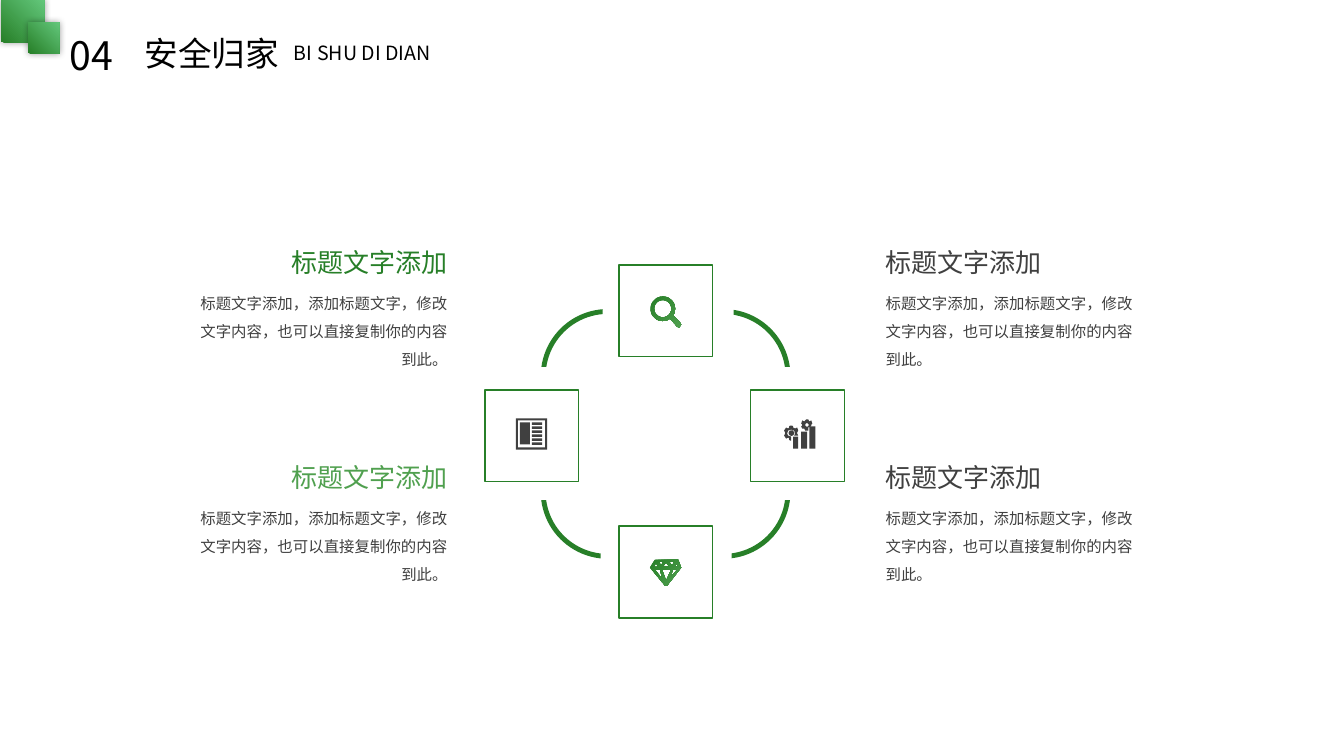
"""Build a slide with four icon boxes on a ring and four captions."""
import math

import pptx
import pptx.dml.color
import pptx.enum.shapes
import pptx.enum.text
import pptx.oxml
import pptx.oxml.ns
import pptx.oxml.xmlchemy
import pptx.util

Cm = pptx.util.Cm
RGB = pptx.dml.color.RGBColor.from_string
SHAPE = pptx.enum.shapes.MSO_SHAPE
ALIGN = pptx.enum.text.PP_ALIGN

THEME = {
    "dark_green": "277F28", "green": "50A04F", "mint": "63C77B",
    "gray": "404040", "black": "000000", "white": "FFFFFF",
    "number": 28, "heading": 24, "subheading": 14, "title": 18.6, "body": 11,
    "head_font": "Noto Sans CJK JP", "text_font": "Noto Sans CJK SC",
}
SHADOW = (
    '<a:effectLst xmlns:a="http://schemas.openxmlformats.org/drawingml/2006/main">'
    '<a:outerShdw blurRad="63500" dist="0" dir="0" algn="ctr" rotWithShape="0">'
    '<a:srgbClr val="000000"><a:alpha val="40000"/></a:srgbClr>'
    '</a:outerShdw></a:effectLst>'
)

prs = pptx.Presentation()
prs.slide_width, prs.slide_height = Cm(33.87), Cm(19.05)
s = prs.slides.add_slide(prs.slide_layouts[6])


def add_text(text, box, size, color, font="text_font", align=ALIGN.LEFT, spacing=1.0, wrap=True):
    tf = s.shapes.add_textbox(*map(Cm, box)).text_frame
    frame_format = {"word_wrap": wrap, "margin_top": 0, "margin_bottom": 0}
    for name, value in frame_format.items():
        setattr(tf, name, value)
    p = tf.paragraphs[0]
    p.alignment, p.line_spacing = align, spacing
    r = p.add_run()
    r.text = text
    font_format = {"name": THEME[font], "size": pptx.util.Pt(THEME[size])}
    for name, value in font_format.items():
        setattr(r.font, name, value)
    r.font.color.rgb = RGB(THEME[color])
    ea = pptx.oxml.xmlchemy.OxmlElement("a:ea")
    ea.set("typeface", THEME[font])
    r.font._element.find(pptx.oxml.ns.qn("a:latin")).addnext(ea)


def paint(shape, fill=None, line=None, width=1, angle=0):
    shape.shadow.inherit = False
    if isinstance(fill, tuple):
        shape.fill.gradient()
        shape.fill.gradient_angle = angle
        for stop, color in zip(shape.fill.gradient_stops, fill):
            stop.color.rgb = RGB(THEME[color])
    elif fill:
        shape.fill.solid()
        shape.fill.fore_color.rgb = RGB(THEME[fill])
    else:
        shape.fill.background()
    if line:
        shape.line.color.rgb = RGB(THEME[line])
        shape.line.width = pptx.util.Pt(width)
    else:
        shape.line.fill.background()


body = "标题文字添加，添加标题文字，修改文字内容，也可以直接复制你的内容到此。"
body_w, title_w = 6.86, 4.5
for top, left_color in ((6.22, "dark_green"), (11.63, "green")):
    for x, title_x, align, color in (
        (4.67, 4.67 + body_w - title_w, ALIGN.RIGHT, left_color),
        (22.07, 22.07, ALIGN.LEFT, "gray"),
    ):
        add_text("标题文字添加", (title_x, top, title_w, 1.04), "title", color, align=align, wrap=False)
        add_text(body, (x, top + 0.97, body_w, 2.29), "body", "gray", align=align, spacing=1.5)

for text, box, size, font in (
    ("04", (1.5, 0.79, 2.06, 1.45), "number", "head_font"),
    ("安全归家", (3.4, 0.84, 4.04, 1.27), "heading", "head_font"),
    ("BI SHU DI DIAN", (7.16, 1.04, 4.75, 0.86), "subheading", "text_font"),
):
    add_text(text, box, size, "black", font, ALIGN.JUSTIFY)

for box in ((0.03, 0, 1.09, 1.07), (0.71, 0.56, 0.79, 0.79)):
    sp = s.shapes.add_shape(SHAPE.RECTANGLE, *map(Cm, box))
    paint(sp, ("dark_green", "mint"), angle=45)
    effects = sp._element.spPr.find(pptx.oxml.ns.qn("a:effectLst"))
    effects.getparent().replace(effects, pptx.oxml.parse_xml(SHADOW))

ring = s.shapes.add_shape(SHAPE.ROUNDED_RECTANGLE, Cm(13.69), Cm(7.85), Cm(6.17), Cm(6.17))
ring.adjustments[0] = 0.264
paint(ring, line="dark_green", width=3.5)

for x, y in ((15.19, 6.17), (15.14, 12.32), (12.14, 9.25), (18.24, 9.25)):
    gap = s.shapes.add_shape(SHAPE.RECTANGLE, Cm(x), Cm(y), Cm(3.3), Cm(3.35))
    paint(gap, "white")
for x, y in ((15.6, 6.68), (15.6, 13.26), (12.22, 9.83), (18.92, 9.83)):
    frame = s.shapes.add_shape(SHAPE.RECTANGLE, Cm(x), Cm(y), Cm(2.36), Cm(2.31))
    paint(frame, line="dark_green")

circles = [
    [(cx + radius * math.cos(math.tau * i / 36), cy + radius * math.sin(math.tau * i / 36)) for i in range(36)]
    for cx, cy, radius in ((12.8, 12.2, 12.2), (12.8, 12.2, 8.5), (7.3, 13.5, 2.7), (22.7, 5.4, 1.7))
]
lens_edge, lens_hole, gear_dot, gear_hole = circles
page_rects = [(0, 0, 31, 31), (2, 2, 29, 29), (4, 4, 14, 26)]
page_rects += [(16, 4 + 4 * i, 26, 6.5 + 4 * i) for i in range(6)]
bar_rects = [(9, 17, 14, 29), (17, 12, 23, 29), (25, 7, 31, 29)]
page, bars = [
    [[(x1, y1), (x2, y1), (x2, y2), (x1, y2)] for x1, y1, x2, y2 in rects]
    for rects in (page_rects, bar_rects)
]
handle = [(20, 22), (21.5, 20.9), (23, 19), (24, 20), (30, 26), (31, 28), (29, 31), (27, 30)]
diamond = [
    [(5, 0), (28, 0), (31, 8), (17, 26), (15, 26), (0, 8)],
    [(12, 10), (21, 10), (16, 21)],
    [(13, 7), (16, 3), (19, 7)],
    [(28, 7), (25, 7), (26, 4)],
    [(24, 2), (22, 6), (19, 2)],
    [(13, 2), (11, 6), (9, 2)],
    [(6, 4), (8, 7), (4, 7)],
    [(10, 10), (12, 19), (5, 10)],
    [(20, 18), (23, 10), (27, 10)],
]
large_gear = [
    (6, 6), (8, 6), (9, 7), (9, 8), (11, 9), (13, 8), (14, 11), (13, 13), (13, 14), (14, 16),
    (10, 16), (11, 14), (10, 11), (7, 10), (4, 11), (3, 14), (4, 16), (7, 17), (7, 21), (6, 21),
    (5, 20), (5, 19), (4, 18), (2, 19), (0, 16), (1, 14), (1, 13), (0, 11), (2, 8), (4, 9), (5, 8), (5, 7),
]
small_gear = [
    (22, 0), (24, 0), (25, 2), (27, 1), (28, 4), (27, 5), (27, 6), (24, 8), (24, 11), (21, 11),
    (20, 9), (18, 9), (17, 7), (18, 6), (18, 5), (17, 4), (18, 1), (20, 2), (21, 1),
]
green_blend = ("dark_green", "green")
for x, y, contours, fill in (
    (16.38, 7.47, [lens_edge, lens_hole, handle], green_blend),
    (16.38, 14.1, diamond, green_blend),
    (13, 10.54, page, "gray"),
    (19.76, 10.57, bars + [large_gear, gear_dot, small_gear, gear_hole], "gray"),
):
    outlines = [[(px * 10, py * 10) for px, py in contour] for contour in contours]
    builder = s.shapes.build_freeform(*outlines[0][0], scale=Cm(0.0254) / 10)
    builder.add_line_segments(outlines[0][1:])
    for outline in outlines[1:]:
        builder.move_to(*outline[0])
        builder.add_line_segments(outline[1:])
    paint(builder.convert_to_shape(Cm(x), Cm(y)), fill, angle=315)

prs.save("out.pptx")
